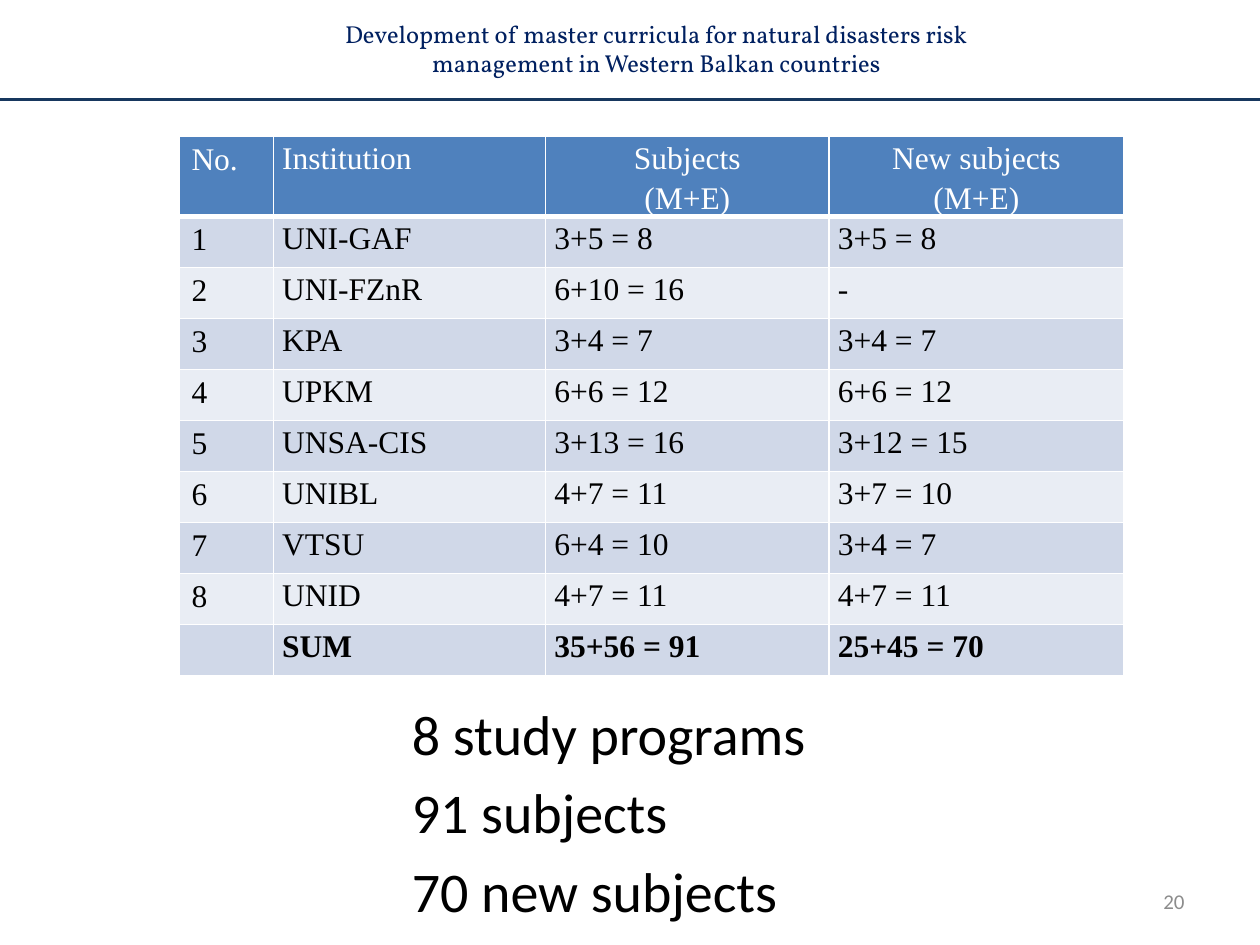
from lxml.etree import SubElement
from pptx import Presentation
from pptx.dml.color import RGBColor
from pptx.enum.text import MSO_ANCHOR, PP_ALIGN
from pptx.oxml.ns import qn
from pptx.util import Inches, Pt

NAVY, RULE, WHITE, BLACK, GREY = "002060", "17375E", "FFFFFF", "000000", "8C8C8C"
HEADER_FILL, BAND_FILLS = "4F81BD", ("D0D8E8", "E9EDF4")
SERIF = "Times New Roman"

COLUMN_WIDTHS = (0.75, 2.16, 2.25, 2.34)
HEADINGS = ("No.", "Institution", "Subjects\n(M+E)", "New subjects\n(M+E)")
INSTITUTIONS = (
    ("UNI-GAF", "3+5 = 8", "3+5 = 8"),
    ("UNI-FZnR", "6+10 = 16", "-"),
    ("KPA", "3+4 = 7", "3+4 = 7"),
    ("UPKM", "6+6 = 12", "6+6 = 12"),
    ("UNSA-CIS", "3+13 = 16", "3+12 = 15"),
    ("UNIBL", "4+7 = 11", "3+7 = 10"),
    ("VTSU", "6+4 = 10", "3+4 = 7"),
    ("UNID", "4+7 = 11", "4+7 = 11"),
)
SUM = ("", "SUM", "35+56 = 91", "25+45 = 70")
TOTALS = "8 study programs\n91 subjects\n70 new subjects"


def color(hex_value):
    """Turn a hex string into a colour."""
    return RGBColor.from_string(hex_value)


def style(paragraph, font_name, size, hex_value, bold=False):
    """Set the font of every run in a paragraph."""
    for run in paragraph.runs:
        run.font.name = font_name
        run.font.size = Pt(size)
        run.font.color.rgb = color(hex_value)
        run.font.bold = bold


def add_text(slide, box, text, font_name, size, hex_value, align, anchor=MSO_ANCHOR.MIDDLE):
    """Add a wrapped text box and return its text frame."""
    frame = slide.shapes.add_textbox(*map(Inches, box)).text_frame
    frame.word_wrap = True
    frame.vertical_anchor = anchor
    frame.text = text
    for paragraph in frame.paragraphs:
        paragraph.alignment = align
        style(paragraph, font_name, size, hex_value)
    return frame


def add_borders(cell, bottom_width):
    """Draw white borders around a cell."""
    properties = cell._tc.get_or_add_tcPr()
    for side, width in (("L", 1), ("R", 1), ("T", 1), ("B", bottom_width)):
        border = SubElement(properties, qn(f"a:ln{side}"), w=str(Pt(width)))
        fill = SubElement(border, qn("a:solidFill"))
        SubElement(fill, qn("a:srgbClr"), val=WHITE)


def fill_cell(cell, text, row, column, is_sum):
    """Write and format one cell by its place in the table."""
    is_header = row == 0
    add_borders(cell, 3 if is_header else 1)
    cell.fill.solid()
    cell.fill.fore_color.rgb = color(HEADER_FILL if is_header else BAND_FILLS[(row - 1) % 2])
    cell.text_frame.text = text
    if column > 0:
        cell.margin_left = cell.margin_right = Inches(0.07)
        cell.margin_top = cell.margin_bottom = 0
    for paragraph in cell.text_frame.paragraphs:
        if column > 0:
            paragraph.line_spacing = 1.15
        if is_header and column > 1:
            paragraph.alignment = PP_ALIGN.CENTER
        style(paragraph, SERIF, 18, WHITE if is_header else BLACK, is_sum)


def add_subject_table(slide, box):
    """Add the table of subjects per institution."""
    numbered = [(str(number), *values) for number, values in enumerate(INSTITUTIONS, 1)]
    rows = [HEADINGS, *numbered, SUM]
    table = slide.shapes.add_table(len(rows), len(HEADINGS), *map(Inches, box)).table
    for column, width in zip(table.columns, COLUMN_WIDTHS):
        column.width = Inches(width)
    for row_index, values in enumerate(rows):
        table.rows[row_index].height = Inches(4.05 / len(rows))
        for column_index, text in enumerate(values):
            fill_cell(table.cell(row_index, column_index), text, row_index, column_index, values is SUM)


def add_header(slide, box):
    """Add the project title and the rule below it."""
    left, top, width, height = box
    add_text(slide, (left + 2.17, top + 0.17, 6.08, 0.42),
             "Development of master curricula for natural disasters risk "
             "management in Western Balkan countries",
             "Vollkorn", 14, NAVY, PP_ALIGN.CENTER)
    rule_y = Inches(top + height)
    rule = slide.shapes.add_connector(1, Inches(left), rule_y, Inches(left + width), rule_y)
    rule.line.color.rgb = color(RULE)
    rule.line.width = Pt(2)
    SubElement(rule._element.spPr, qn("a:effectLst"))


def add_totals(slide, box):
    """Add the three totals below the table."""
    frame = add_text(slide, box, TOTALS, "Calibri", 32, BLACK, PP_ALIGN.LEFT, MSO_ANCHOR.TOP)
    for paragraph in frame.paragraphs:
        properties = paragraph._p.get_or_add_pPr()
        properties.set("marL", str(Inches(0.38)))
        properties.set("indent", str(Inches(-0.38)))
    for paragraph in frame.paragraphs[1:]:
        paragraph.space_before = Pt(6.4)


def main():
    """Build and save the slide."""
    presentation = Presentation()
    presentation.slide_width, presentation.slide_height = Inches(10), Inches(7.5)
    slide = presentation.slides.add_slide(presentation.slide_layouts[6])
    add_subject_table(slide, (1.42, 1.08, 7.5, 4.34))
    add_text(slide, (7.17, 6.95, 2.33, 0.4), "20", "Calibri", 12, GREY, PP_ALIGN.RIGHT)
    add_totals(slide, (3.17, 5.5, 3.46, 1.93))
    add_header(slide, (0, 0, 10, 0.79))
    presentation.save("out.pptx")


if __name__ == "__main__":
    main()
